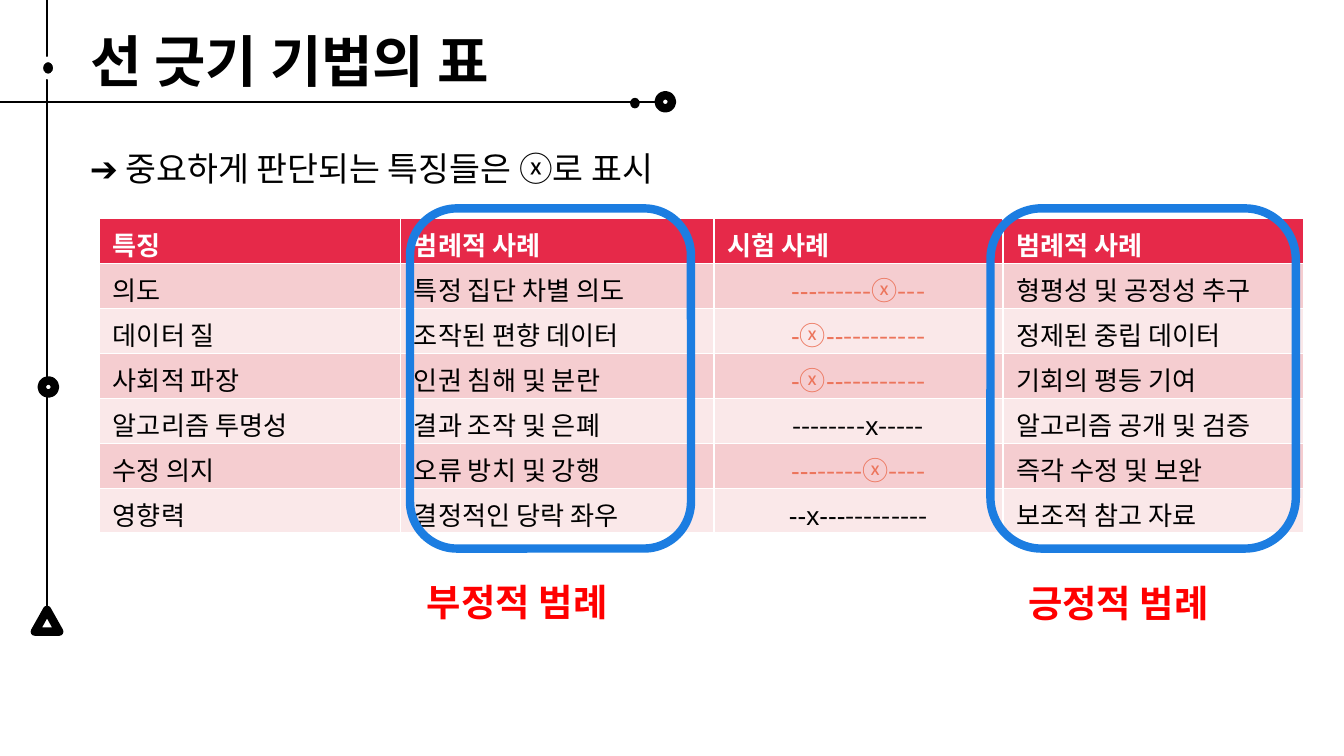
from lxml.etree import SubElement
from pptx import Presentation
from pptx.dml.color import RGBColor
from pptx.enum.shapes import MSO_CONNECTOR, MSO_SHAPE
from pptx.enum.text import MSO_ANCHOR, MSO_AUTO_SIZE, PP_ALIGN
from pptx.oxml.ns import qn
from pptx.util import Cm, Pt

BLACK = RGBColor(0x00, 0x00, 0x00)
WHITE = RGBColor(0xFF, 0xFF, 0xFF)
RED = RGBColor(0xFF, 0x00, 0x00)
BLUE = RGBColor(0x1C, 0x7D, 0xE1)
CORAL = RGBColor(0xEC, 0x74, 0x5B)
HEADER_FILL = RGBColor(0xE6, 0x29, 0x49)
BAND_FILLS = [RGBColor(0xF5, 0xCD, 0xD0), RGBColor(0xFA, 0xE8, 0xE9)]

LATIN = "Arial"
KOREAN = "Noto Sans CJK KR"

TITLE = "선 긋기 기법의 표"
SUBTITLE = [("➔ 중요하게 판단되는 특징들은 ", LATIN), ("ⓧ로 표시", KOREAN)]
HEADERS = ["특징", "범례적 사례", "시험 사례", "범례적 사례"]
LEFT_MARK = [("-", LATIN), ("ⓧ", KOREAN), ("--", LATIN), ("---------", KOREAN)]
ROWS = [
    ("의도", "특정 집단 차별 의도",
     [("---", LATIN), ("------ⓧ---", KOREAN)], "형평성 및 공정성 추구"),
    ("데이터 질", "조작된 편향 데이터", LEFT_MARK, "정제된 중립 데이터"),
    ("사회적 파장", "인권 침해 및 분란", LEFT_MARK, "기회의 평등 기여"),
    ("알고리즘 투명성", "결과 조작 및 은폐",
     [("--------", KOREAN), ("x", LATIN), ("-----", KOREAN)], "알고리즘 공개 및 검증"),
    ("수정 의지", "오류 방치 및 강행",
     [("---", LATIN), ("-----ⓧ----", KOREAN)], "즉각 수정 및 보완"),
    ("영향력", "결정적인 당락 좌우",
     [("--x---", LATIN), ("---------", KOREAN)], "보조적 참고 자료"),
]
COLUMN_WIDTHS = [5.69, 5.92, 5.46, 5.69]
ROW_HEIGHT = 0.85

RULES = [(0, 1.93, 12.7, 1.93), (0.89, 0, 0.89, 11.84)]
ORNAMENTS = [
    (MSO_SHAPE.OVAL, 11.91, 1.85, 0.18, 0.2, BLACK, None, 0),
    (MSO_SHAPE.OVAL, 0.79, 7.19, 0.25, 0.25, WHITE, BLACK, 4.5),
    (MSO_SHAPE.OVAL, 0.76, 1.12, 0.3, 0.33, BLACK, WHITE, 3),
    (MSO_SHAPE.ISOSCELES_TRIANGLE, 0.66, 11.53, 0.46, 0.41, WHITE, BLACK, 4.5),
    (MSO_SHAPE.OVAL, 12.45, 1.8, 0.25, 0.25, WHITE, BLACK, 4.5),
]
HIGHLIGHTS = [
    (MSO_SHAPE.ROUNDED_RECTANGLE, 7.75, 3.94, 5.31, 6.43, None, BLUE, 4.5),
    (MSO_SHAPE.ROUNDED_RECTANGLE, 18.72, 3.94, 5.77, 6.43, None, BLUE, 4.5),
]
CAPTIONS = [("부정적 범례", 7.82, 10.82), ("긍정적 범례", 19.18, 10.85)]


def add_runs(paragraph, runs, size, color, bold=False):
    for words, typeface in runs:
        run = paragraph.add_run()
        run.text = words
        run.font.size = Pt(size)
        run.font.bold = bold
        run.font.color.rgb = color
        run.font.name = typeface
        SubElement(run._r.rPr, qn("a:ea")).set("typeface", KOREAN)


def add_rule(slide, x1, y1, x2, y2):
    rule = slide.shapes.add_connector(
        MSO_CONNECTOR.STRAIGHT, Cm(x1), Cm(y1), Cm(x2), Cm(y2))
    rule.line.color.rgb = BLACK
    rule.line.width = Pt(0.75)
    SubElement(rule._element.spPr, qn("a:effectLst"))


def add_outline(slide, preset, left, top, width, height, fill, line, weight):
    outline = slide.shapes.add_shape(
        preset, Cm(left), Cm(top), Cm(width), Cm(height))
    outline.shadow.inherit = False
    if fill is None:
        outline.fill.background()
    else:
        outline.fill.solid()
        outline.fill.fore_color.rgb = fill
    if line is None:
        outline.line.fill.background()
    else:
        outline.line.color.rgb = line
        outline.line.width = Pt(weight)


def add_label(slide, runs, left, top, width, height, size, color, bold=False):
    frame = slide.shapes.add_textbox(
        Cm(left), Cm(top), Cm(width), Cm(height)).text_frame
    frame.word_wrap = True
    frame.auto_size = MSO_AUTO_SIZE.SHAPE_TO_FIT_TEXT
    add_runs(frame.paragraphs[0], runs, size, color, bold)


def fill_cell(cell, runs, fill, color, bold=False, align=PP_ALIGN.LEFT):
    cell.margin_bottom = Cm(0)
    cell.fill.solid()
    cell.fill.fore_color.rgb = fill
    paragraph = cell.text_frame.paragraphs[0]
    paragraph.alignment = align
    add_runs(paragraph, runs, 14, color, bold)


def add_comparison(slide):
    row_count = len(ROWS) + 1
    comparison = slide.shapes.add_table(
        row_count, len(HEADERS), Cm(1.88), Cm(4.13),
        Cm(sum(COLUMN_WIDTHS)), Cm(ROW_HEIGHT * row_count)).table
    for column, width in zip(comparison.columns, COLUMN_WIDTHS):
        column.width = Cm(width)
    for row in comparison.rows:
        row.height = Cm(ROW_HEIGHT)
    for col, header in enumerate(HEADERS):
        fill_cell(comparison.cell(0, col), [(header, LATIN)], HEADER_FILL, WHITE, True)
    for index, (feature, negative, scale, positive) in enumerate(ROWS):
        band = BAND_FILLS[index % 2]
        for col, words in ((0, feature), (1, negative), (3, positive)):
            fill_cell(comparison.cell(index + 1, col), [(words, LATIN)], band, BLACK)
        important = any("ⓧ" in words for words, _ in scale)
        fill_cell(comparison.cell(index + 1, 2), scale, band,
                  CORAL if important else BLACK, align=PP_ALIGN.CENTER)


def main():
    deck = Presentation()
    deck.slide_width, deck.slide_height = Cm(25.4), Cm(14.29)
    slide = deck.slides.add_slide(deck.slide_layouts[5])

    title = slide.shapes.title
    title.left, title.top, title.width, title.height = Cm(1.45), Cm(0.41), Cm(9.27), Cm(1.45)
    title.text_frame.auto_size = MSO_AUTO_SIZE.NONE
    title.text_frame.word_wrap = False
    title.text_frame.vertical_anchor = MSO_ANCHOR.MIDDLE
    heading = title.text_frame.paragraphs[0]
    heading.alignment = PP_ALIGN.LEFT
    add_runs(heading, [(TITLE, KOREAN)], 30, BLACK, True)

    for rule in RULES:
        add_rule(slide, *rule)
    for ornament in ORNAMENTS:
        add_outline(slide, *ornament)
    add_comparison(slide)
    add_label(slide, SUBTITLE, 1.45, 2.67, 20.07, 1.02, 18, BLACK)
    for highlight in HIGHLIGHTS:
        add_outline(slide, *highlight)
    for words, left, top in CAPTIONS:
        add_label(slide, [(words, LATIN)], left, top, 5.77, 1.12, 20, RED, True)

    deck.save("out.pptx")


if __name__ == "__main__":
    main()
